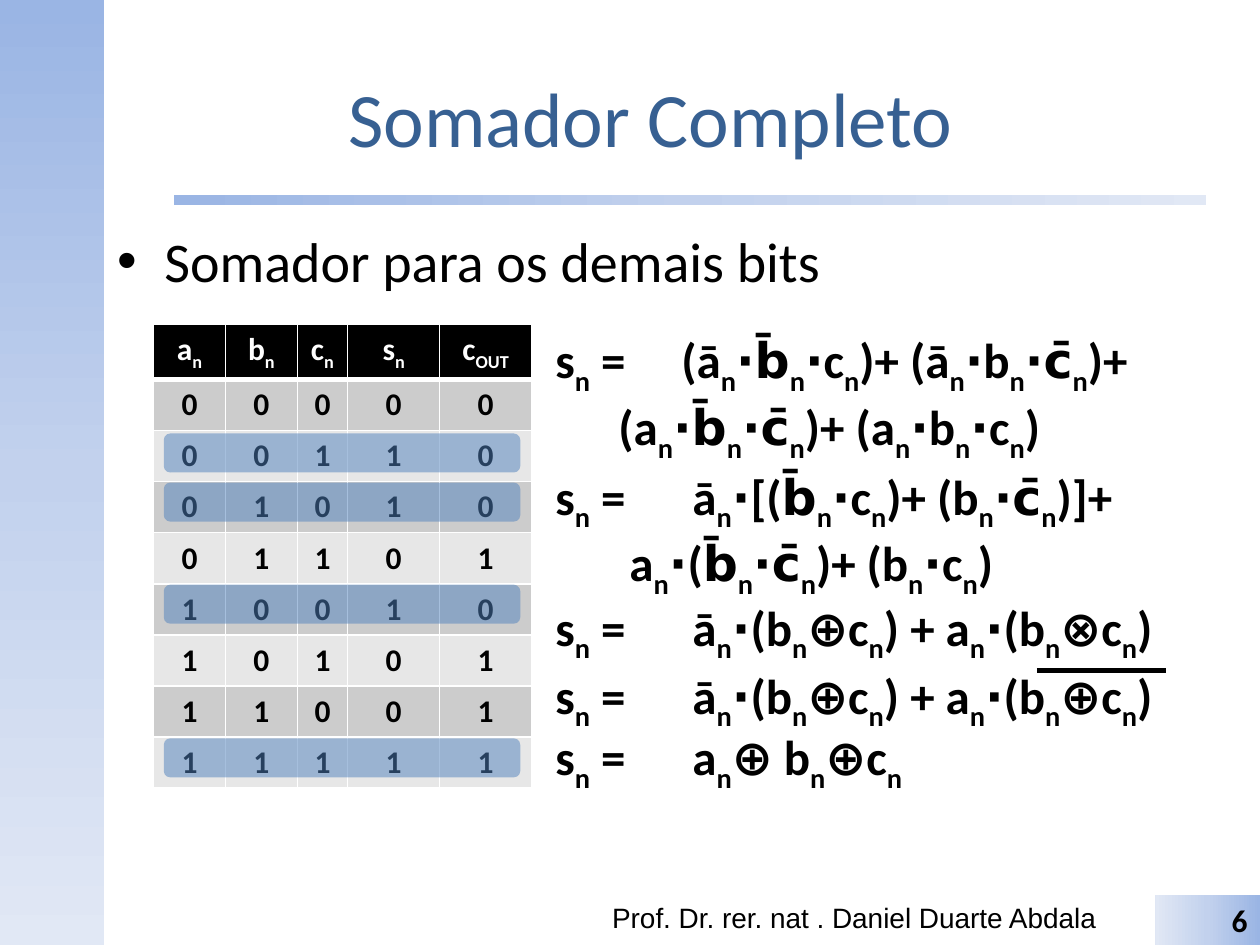
from lxml import etree
from pptx import Presentation
from pptx.dml.color import RGBColor
from pptx.enum import shapes, text
from pptx.oxml import ns
from pptx import util as u

SCALE = 9144  # 100 px to the inch
BLACK, WHITE = "000000", "FFFFFF"
BLUE_FADE = ((0, "9AB5E4"), (50, "C2D1ED"), (100, "E1E8F5"))

TRUTH_HEADER = ("a_n", "b_n", "c_n", "s_n", "c_OUT")
TRUTH_ROWS = ("00000", "00110", "01010", "01101", "10010", "10101", "11001", "11111")
COLUMN_WIDTHS = (57, 57, 40, 73, 73)
HIGHLIGHT_TOPS = (87, 126, 207, 329)

# Top and height within the region, then the lines; "_n" is a subscript n.
EQUATIONS = (
    (0, 104, ("s_n =\t(ā_n⋅b̄_n⋅c_n)+ (ā_n⋅b_n⋅c̄_n)+",
              "\t(a_n⋅b̄_n⋅c̄_n)+ (a_n⋅b_n⋅c_n)")),
    (108, 104, ("s_n =\t ā_n⋅[(b̄_n⋅c_n)+ (b_n⋅c̄_n)]+",
                "\t a_n⋅(b̄_n⋅c̄_n)+ (b_n⋅c_n)")),
    (212, 57, ("s_n =\t ā_n⋅(b_n⊕c_n) + a_n⋅(b_n⊗c_n)",)),
    (266, 57, ("s_n =\t ā_n⋅(b_n⊕c_n) + a_n⋅(b_n⊕c_n)",)),
    (315, 57, ("s_n =\t a_n⊕ b_n⊕c_n",)),
)


def px(*lengths):
    return [u.Emu(length * SCALE) for length in lengths]


def color(value):
    return RGBColor.from_string(value)


def add_run(paragraph, words, size, hex_color=BLACK, bold=False, font="Calibri", baseline=0):
    run = paragraph.add_run()
    run.text = words
    run.font.size, run.font.name, run.font.bold = u.Pt(size), font, bold
    run.font.color.rgb = color(hex_color)
    if baseline:
        run.font._element.set("baseline", str(baseline * 1000))


def add_subscripted(paragraph, words, size, hex_color=BLACK, subscript="n"):
    """Add bold runs, turning each "_" plus subscript into a lowered run."""
    for index, part in enumerate(words.split("_" + subscript)):
        if index:
            add_run(paragraph, subscript, size, hex_color, True, baseline=-25)
        if part:
            add_run(paragraph, part, size, hex_color, True)


def add_plain_shape(slide, kind, box):
    shape = slide.shapes.add_shape(kind, *px(*box))
    shape.shadow.inherit = False
    shape.line.fill.background()
    return shape


def add_gradient_bar(slide, kind, box, angle):
    shape = add_plain_shape(slide, kind, box)
    shape.fill.gradient()
    gradient = shape._element.spPr.find(ns.qn("a:gradFill"))
    stops = gradient.find(ns.qn("a:gsLst"))
    for stop in list(stops):
        stops.remove(stop)
    for position, value in BLUE_FADE:
        stop = etree.SubElement(stops, ns.qn("a:gs"), pos=str(position * 1000))
        etree.SubElement(stop, ns.qn("a:srgbClr"), val=value)
    gradient.find(ns.qn("a:lin")).set("ang", str(angle * 60000))
    return shape


def fill_placeholder(placeholder, box, words, size, hex_color):
    placeholder.left, placeholder.top, placeholder.width, placeholder.height = px(*box)
    paragraph = placeholder.text_frame.paragraphs[0]
    add_run(paragraph, words, size, hex_color)
    return paragraph


def add_frame(slide):
    rectangle, rounded = shapes.MSO_SHAPE.RECTANGLE, shapes.MSO_SHAPE.ROUNDED_RECTANGLE
    add_gradient_bar(slide, rectangle, (0, 0, 83, 750), 90)
    add_gradient_bar(slide, rounded, (138, 155, 819, 8), 0).adjustments[0] = 0


def add_footer(slide, left, top, width, height):
    author = slide.shapes.add_textbox(*px(left, top, width - 107, height)).text_frame
    author.word_wrap = True
    add_run(author.paragraphs[0], "Prof. Dr. rer. nat . Daniel Duarte Abdala", 16, font="Arial")
    number_box = (left + width - 83, top, 83, height)
    number = add_gradient_bar(slide, shapes.MSO_SHAPE.RECTANGLE, number_box, 180)
    number.text_frame.vertical_anchor = text.MSO_ANCHOR.MIDDLE
    paragraph = number.text_frame.paragraphs[0]
    paragraph.alignment = text.PP_ALIGN.RIGHT
    add_run(paragraph, "6", 18, bold=True)


def style_cell(cell, fill, bottom_width):
    properties = cell._tc.get_or_add_tcPr()
    for side, width in (("L", 1), ("R", 1), ("T", 1), ("B", bottom_width)):
        line = etree.SubElement(properties, ns.qn("a:ln" + side), w=str(u.Pt(width)))
        solid = etree.SubElement(line, ns.qn("a:solidFill"))
        etree.SubElement(solid, ns.qn("a:srgbClr"), val=WHITE)
    cell.fill.solid()
    cell.fill.fore_color.rgb = color(fill)


def add_truth_table(slide, left, top, width, height):
    rows = (TRUTH_HEADER, *TRUTH_ROWS)
    table = slide.shapes.add_table(
        len(rows), len(TRUTH_HEADER), *px(left, top, width, height)).table
    for column, column_width in zip(table.columns, COLUMN_WIDTHS):
        column.width = px(column_width)[0]
    for row_index, row in enumerate(rows):
        header = row_index == 0
        fill = BLACK if header else ("E7E7E7", "CCCCCC")[row_index % 2]
        for column_index, words in enumerate(row):
            cell = table.cell(row_index, column_index)
            style_cell(cell, fill, 3 if header else 1)
            paragraph = cell.text_frame.paragraphs[0]
            paragraph.alignment = text.PP_ALIGN.CENTER
            subscript = "OUT" if words.endswith("OUT") else "n"
            add_subscripted(paragraph, words, 18, WHITE if header else BLACK, subscript)


def add_highlights(slide, left, top, width, height):
    for offset in HIGHLIGHT_TOPS:
        band = add_plain_shape(slide, shapes.MSO_SHAPE.ROUNDED_RECTANGLE,
                               (left, top + offset, width, height))
        band.fill.solid()
        band.fill.fore_color.rgb = color("4F81BD")
        value = band._element.spPr.find(".//" + ns.qn("a:srgbClr"))
        etree.SubElement(value, ns.qn("a:alpha"), val="50000")


def add_equations(slide, left, top, width):
    for offset, height, lines in EQUATIONS:
        frame = slide.shapes.add_textbox(*px(left, top + offset, width, height)).text_frame
        frame.word_wrap = True
        frame.auto_size = text.MSO_AUTO_SIZE.SHAPE_TO_FIT_TEXT
        for index, line in enumerate(lines):
            paragraph = frame.add_paragraph() if index else frame.paragraphs[0]
            add_subscripted(paragraph, line, 28)
    bar_y = top + 275
    negation = slide.shapes.add_connector(
        shapes.MSO_CONNECTOR.STRAIGHT, *px(left + 392, bar_y, left + 494, bar_y))
    negation.line.color.rgb = color(BLACK)
    negation.line.width = u.Pt(3)
    etree.SubElement(negation._element.spPr, ns.qn("a:effectLst"))


def main():
    presentation = Presentation()
    presentation.slide_width, presentation.slide_height = px(1000, 750)
    slide = presentation.slides.add_slide(presentation.slide_layouts[1])
    add_frame(slide)
    title = fill_placeholder(slide.shapes.title, (83, 30, 867, 125),
                             "Somador Completo", 44, "376092")
    title.alignment = text.PP_ALIGN.CENTER
    fill_placeholder(slide.placeholders[1], (83, 175, 867, 495),
                     "Somador para os demais bits", 32, BLACK)
    add_footer(slide, 476, 710, 524, 40)
    add_truth_table(slide, 122, 257, 300, 365)
    add_highlights(slide, 130, 257, 283, 31)
    add_equations(slide, 431, 257, 542)
    presentation.save("out.pptx")


if __name__ == "__main__":
    main()
